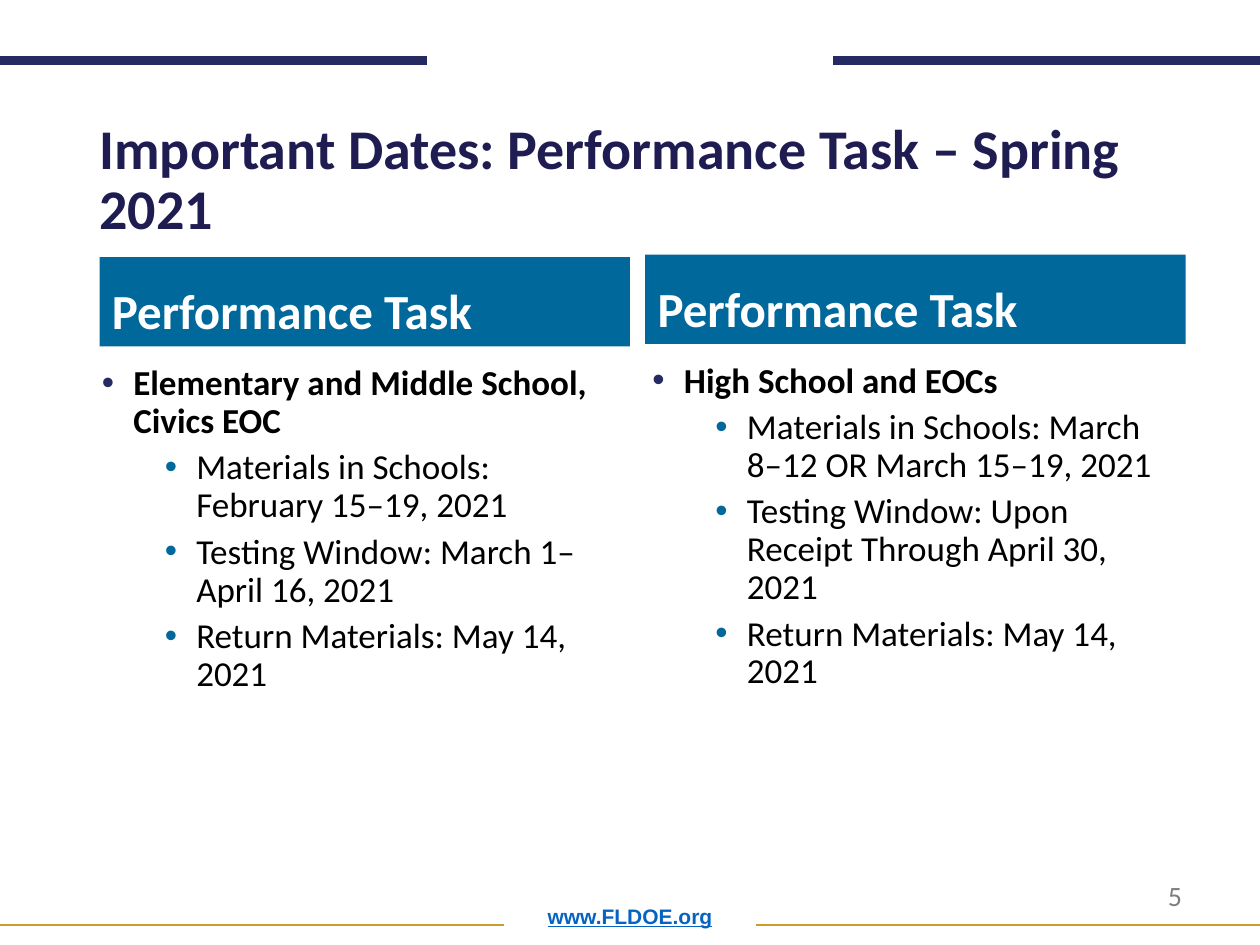
from lxml import etree
from pptx import Presentation
from pptx.dml.color import RGBColor
from pptx.enum.shapes import MSO_CONNECTOR, MSO_SHAPE
from pptx.enum.text import MSO_ANCHOR, MSO_AUTO_SIZE, PP_ALIGN
from pptx.oxml.ns import qn
from pptx.util import Inches, Pt

COLORS = {
    "navy": "262A63",
    "title": "1F1C52",
    "blue": "00689B",
    "gold": "CD9D2C",
    "link": "0563C1",
    "gray": "7F7F7F",
    "black": "000000",
    "white": "FFFFFF",
}
PAGE_WIDTH = 10

COLUMNS = [
    {
        "header_box": (0.79, 2.04, 4.21, 0.71),
        "list_box": (0.71, 2.85, 4.23, 4.78),
        "header": "Performance Task",
        "group": "Elementary and Middle School, Civics EOC",
        "dates": [
            "Materials in Schools: February 15–19, 2021",
            "Testing Window: March 1–April 16, 2021",
            "Return Materials: May 14, 2021",
        ],
    },
    {
        "header_box": (5.12, 2.02, 4.29, 0.71),
        "list_box": (5.08, 2.83, 4.25, 4.78),
        "header": "Performance Task",
        "group": "High School and EOCs",
        "dates": [
            "Materials in Schools: March 8–12 OR March 15–19, 2021",
            "Testing Window: Upon Receipt Through April 30, 2021",
            "Return Materials: May 14, 2021",
        ],
    },
]


def color(name):
    return RGBColor.from_string(COLORS[name])


def to_lengths(box):
    return [Inches(value) for value in box]


def set_frame(shape, anchor=MSO_ANCHOR.TOP):
    frame = shape.text_frame
    frame.word_wrap = True
    frame.auto_size = MSO_AUTO_SIZE.NONE
    frame.vertical_anchor = anchor
    return frame


def add_span(para, text, size, color_name, bold=False, font="Calibri"):
    para.line_spacing = 0.9
    span = para.add_run()
    span.text = text
    span.font.name = font
    span.font.size = Pt(size)
    span.font.bold = bold
    span.font.color.rgb = color(color_name)
    return span


def set_bullet(para, color_name, indent):
    properties = para._p.get_or_add_pPr()
    properties.set("marL", str(Inches(indent)))
    properties.set("indent", str(Inches(-0.25)))
    bullet_color = etree.SubElement(properties, qn("a:buClr"))
    etree.SubElement(bullet_color, qn("a:srgbClr"), val=COLORS[color_name])
    etree.SubElement(properties, qn("a:buFont"), typeface="Arial")
    etree.SubElement(properties, qn("a:buChar"), char="•")


def add_rule(page, left, right, top, color_name, width):
    rule = page.shapes.add_connector(
        MSO_CONNECTOR.STRAIGHT, *to_lengths((left, top, right, top)))
    rule.line.color.rgb = color(color_name)
    rule.line.width = Pt(width)
    etree.SubElement(rule._element.spPr, qn("a:effectLst"))


def add_rule_pair(page, top, length, color_name, width):
    """Two rules of equal length, running in from the page edges."""
    add_rule(page, 0, length, top, color_name, width)
    add_rule(page, PAGE_WIDTH - length, PAGE_WIDTH, top, color_name, width)


def add_footer(page, address_box, number_box):
    address = page.shapes.add_textbox(*to_lengths(address_box))
    para = set_frame(address, MSO_ANCHOR.BOTTOM).paragraphs[0]
    para.alignment = PP_ALIGN.CENTER
    span = add_span(para, "www.FLDOE.org", 12, "link", True, "Arial")
    span.font.underline = True

    number = page.shapes.add_textbox(*to_lengths(number_box))
    para = set_frame(number).paragraphs[0]
    add_span(para, "5", 16, "gray")
    para.line_spacing = 1.0


def set_title(page, box, text):
    title = page.shapes.title
    title.left, title.top, title.width, title.height = to_lengths(box)
    para = set_frame(title).paragraphs[0]
    para.alignment = PP_ALIGN.LEFT
    add_span(para, text, 32, "title", True)


def add_header(page, box, text):
    header = page.shapes.add_shape(MSO_SHAPE.RECTANGLE, *to_lengths(box))
    header.shadow.inherit = False
    header.fill.solid()
    header.fill.fore_color.rgb = color("blue")
    header.line.fill.background()
    para = set_frame(header, MSO_ANCHOR.BOTTOM).paragraphs[0]
    para.alignment = PP_ALIGN.LEFT
    add_span(para, text, 28, "white", True)


def add_date_list(page, box, group, dates):
    frame = set_frame(page.shapes.add_textbox(*to_lengths(box)))
    para = frame.paragraphs[0]
    set_bullet(para, "navy", 0.25)
    add_span(para, group, 20, "black", True)
    for date in dates:
        para = frame.add_paragraph()
        para.level = 1
        set_bullet(para, "blue", 0.75)
        para.space_before = Pt(5)
        add_span(para, date, 20, "black")


def main():
    deck = Presentation()
    deck.slide_width, deck.slide_height = Inches(PAGE_WIDTH), Inches(7.5)
    page = deck.slides.add_slide(deck.slide_layouts[5])

    # Page frame
    add_rule_pair(page, 0.48, 3.39, "navy", 5)
    add_rule_pair(page, 7.34, 4, "gold", 1)
    add_footer(page, (0.69, 7, 8.62, 0.42), (9.17, 6.92, 0.73, 0.37))

    # Title
    set_title(page, (0.69, 0.91, 8.62, 0.87),
              "Important Dates: Performance Task – Spring 2021")

    # Date columns
    for column in COLUMNS:
        add_header(page, column["header_box"], column["header"])
        add_date_list(page, column["list_box"], column["group"], column["dates"])

    deck.save("out.pptx")


if __name__ == "__main__":
    main()
